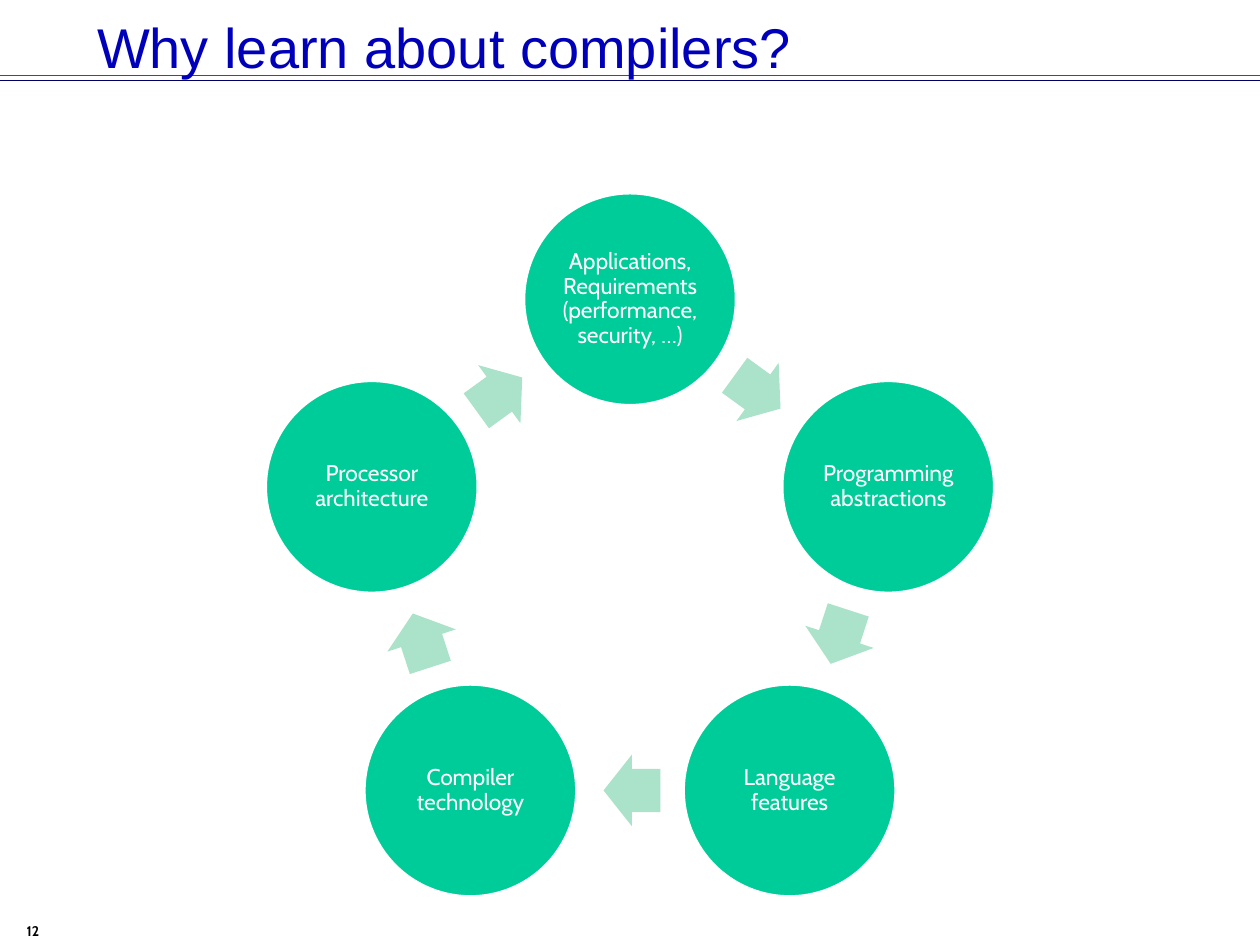
import math
from dataclasses import dataclass

from lxml import etree
from pptx import Presentation
from pptx.dml.color import RGBColor
from pptx.enum.shapes import MSO_CONNECTOR, MSO_SHAPE
from pptx.enum.text import MSO_ANCHOR, MSO_AUTO_SIZE, PP_ALIGN
from pptx.oxml.ns import qn
from pptx.util import Inches, Pt

ELLIPSE, RIGHT_ARROW = MSO_SHAPE.OVAL, MSO_SHAPE.RIGHT_ARROW
STRAIGHT = MSO_CONNECTOR.STRAIGHT
MIDDLE, TOP = MSO_ANCHOR.MIDDLE, MSO_ANCHOR.TOP
LEFT, CENTER, RIGHT = PP_ALIGN.LEFT, PP_ALIGN.CENTER, PP_ALIGN.RIGHT

TITLE_LAYOUT = 5
SLIDE_WIDTH, SLIDE_HEIGHT = 10, 7.5
CYCLE_X, CYCLE_Y, CYCLE_RADIUS = 5, 4.53, 2.155
CIRCLE_SIZE = 1.69
ARROW_WIDTH, ARROW_HEIGHT = 0.45, 0.57
ARROW_SETBACK = 0.015


@dataclass(frozen=True)
class Rule:
    y: float
    color: str


@dataclass(frozen=True)
class TextStyle:
    size: float
    font: str
    color: str
    align: PP_ALIGN
    bold: bool = False
    line_spacing: float = 1.0


RULES = [Rule(0.6, "FF0000"), Rule(0.64, "000066")]
STAGES = [
    "Applications, Requirements (performance, security, …)",
    "Programming abstractions",
    "Language features",
    "Compiler technology",
    "Processor architecture",
]
TITLE_STYLE = TextStyle(32, "Arial", "0000BA", LEFT)
NUMBER_STYLE = TextStyle(8, "Cabin", "000000", RIGHT, bold=True)
STAGE_STYLE = TextStyle(13, "Cabin", "FFFFFF", CENTER, line_spacing=0.9)


def rgb(color: str) -> RGBColor:
    return RGBColor.from_string(color)


def set_attributes(target, values: dict) -> None:
    for name, value in values.items():
        setattr(target, name, value)


def write_text(shape, text: str, style: TextStyle, anchor: MSO_ANCHOR,
               margin_x: float = 0.1, margin_y: float = 0.05) -> None:
    frame = shape.text_frame
    frame.text = text
    set_attributes(frame, {
        "word_wrap": True, "auto_size": MSO_AUTO_SIZE.NONE, "vertical_anchor": anchor,
        "margin_left": Inches(margin_x), "margin_right": Inches(margin_x),
        "margin_top": Inches(margin_y), "margin_bottom": Inches(margin_y),
    })
    paragraph = frame.paragraphs[0]
    set_attributes(paragraph, {"alignment": style.align, "line_spacing": style.line_spacing})
    font = paragraph.runs[0].font
    set_attributes(font, {"size": Pt(style.size), "name": style.font, "bold": style.bold})
    font.color.rgb = rgb(style.color)


def add_rule(slide, rule: Rule) -> None:
    y = Inches(rule.y)
    line = slide.shapes.add_connector(STRAIGHT, 0, y, Inches(SLIDE_WIDTH), y)
    line.line.color.rgb = rgb(rule.color)
    line.line.width = Pt(1)
    etree.SubElement(line._element.spPr, qn("a:effectLst"))


def add_centered_shape(slide, kind: MSO_SHAPE, x: float, y: float,
                       width: float, height: float, fill: str):
    shape = slide.shapes.add_shape(kind, Inches(x - width / 2), Inches(y - height / 2),
                                   Inches(width), Inches(height))
    shape.shadow.inherit = False
    shape.fill.solid()
    shape.fill.fore_color.rgb = rgb(fill)
    return shape


def add_stage(slide, text: str, x: float, y: float) -> None:
    circle = add_centered_shape(slide, ELLIPSE, x, y, CIRCLE_SIZE, CIRCLE_SIZE, "00CC99")
    circle.line.color.rgb = rgb("FFFFFF")
    circle.line.width = Pt(2)
    write_text(circle, text, STAGE_STYLE, MIDDLE, 0.02, 0.02)


def add_arrow(slide, start: tuple[float, float], end: tuple[float, float]) -> None:
    """Place an arrow between two circle centres, slightly nearer the start."""
    angle = math.atan2(end[1] - start[1], end[0] - start[0])
    x = (start[0] + end[0]) / 2 - ARROW_SETBACK * math.cos(angle)
    y = (start[1] + end[1]) / 2 - ARROW_SETBACK * math.sin(angle)
    arrow = add_centered_shape(slide, RIGHT_ARROW, x, y, ARROW_WIDTH, ARROW_HEIGHT, "ABE2CA")
    arrow.line.fill.background()
    arrow.adjustments[0], arrow.adjustments[1] = 0.6, 0.5
    arrow.rotation = round(math.degrees(angle)) % 360


def add_cycle(slide, stages: list[str]) -> None:
    """Space the stages evenly clockwise from the top, with arrows between."""
    angles = [2 * math.pi * index / len(stages) for index in range(len(stages))]
    centers = [(CYCLE_X + CYCLE_RADIUS * math.sin(angle),
                CYCLE_Y - CYCLE_RADIUS * math.cos(angle)) for angle in angles]
    for text, center, following in zip(stages, centers, centers[1:] + centers[:1]):
        add_stage(slide, text, *center)
        add_arrow(slide, center, following)


def main() -> None:
    presentation = Presentation()
    presentation.slide_width = Inches(SLIDE_WIDTH)
    presentation.slide_height = Inches(SLIDE_HEIGHT)
    slide = presentation.slides.add_slide(presentation.slide_layouts[TITLE_LAYOUT])

    for rule in RULES:
        add_rule(slide, rule)

    title = slide.shapes.title
    set_attributes(title, {"left": Inches(0.67), "top": Inches(0.1),
                           "width": Inches(8.65), "height": Inches(0.53)})
    write_text(title, "Why learn about compilers?", TITLE_STYLE, MIDDLE)
    slide.shapes._spTree.append(title._element)  # title lies above the rules

    number = slide.shapes.add_textbox(0, Inches(7.27), Inches(0.41), Inches(0.23))
    write_text(number, "12", NUMBER_STYLE, TOP)

    add_cycle(slide, STAGES)
    presentation.save("out.pptx")


if __name__ == "__main__":
    main()
